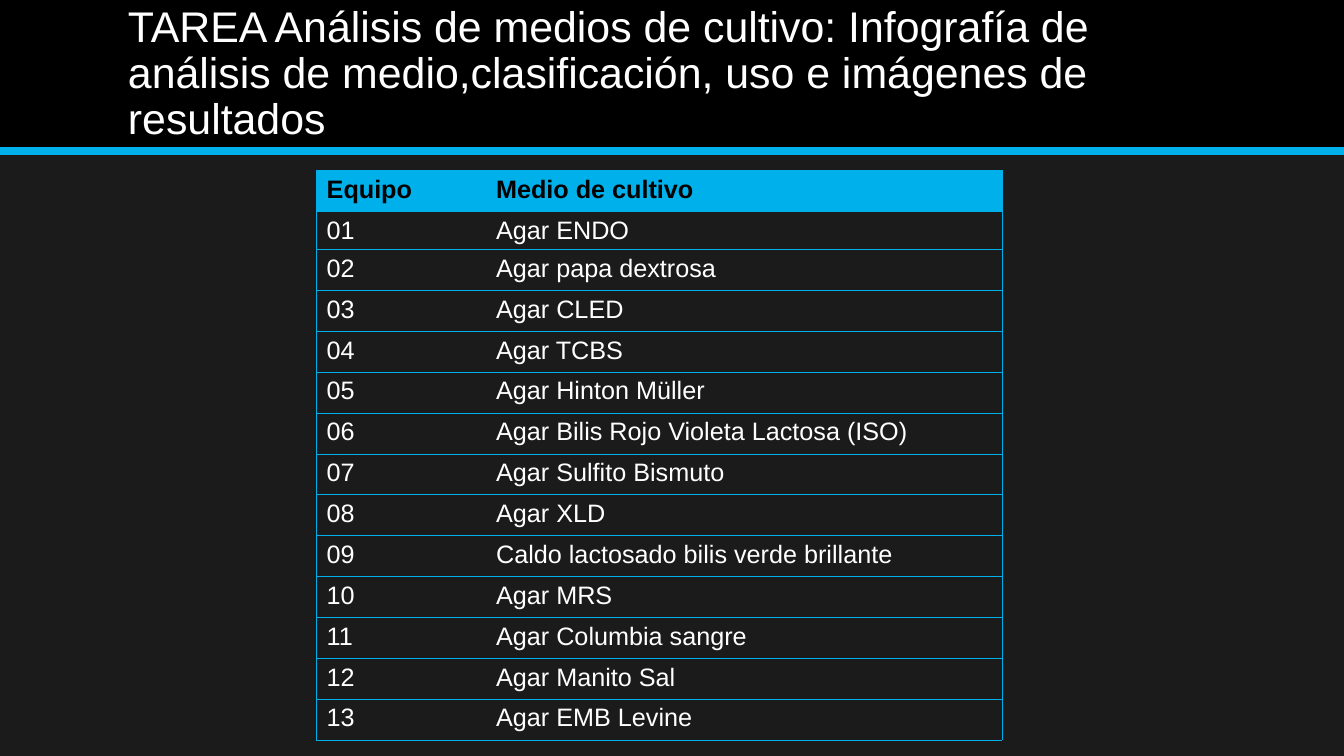
import pptx
import pptx.util
import pptx.dml.color
import pptx.enum.shapes
import pptx.enum.text
import pptx.oxml.ns
import lxml.etree

Cm = pptx.util.Cm
Pt = pptx.util.Pt
RGBColor = pptx.dml.color.RGBColor
qn = pptx.oxml.ns.qn

BLACK = RGBColor(0x00, 0x00, 0x00)
WHITE = RGBColor(0xFF, 0xFF, 0xFF)
DARK = RGBColor(0x1B, 0x1B, 0x1B)
BLUE = RGBColor(0x00, 0xB0, 0xEA)

MEDIA = [
    "Agar ENDO", "Agar papa dextrosa", "Agar CLED", "Agar TCBS",
    "Agar Hinton Müller", "Agar Bilis Rojo Violeta Lactosa (ISO)",
    "Agar Sulfito Bismuto", "Agar XLD",
    "Caldo lactosado bilis verde brillante", "Agar MRS",
    "Agar Columbia sangre", "Agar Manito Sal", "Agar EMB Levine",
]


def write(frame, text, size=18, color=WHITE, bold=False, spacing=1.0):
    para = frame.paragraphs[0]
    para.alignment = pptx.enum.text.PP_ALIGN.LEFT
    para.line_spacing = spacing
    run = para.add_run()
    run.text = text
    run.font.name = "Arial"
    run.font.size = Pt(size)
    run.font.bold = bold
    run.font.color.rgb = color


def border(cell, side, color):
    line = lxml.etree.SubElement(cell._tc.get_or_add_tcPr(), qn("a:" + side))
    line.set("w", str(Pt(0.5)))
    if color is None:
        lxml.etree.SubElement(line, qn("a:noFill"))
    else:
        fill = lxml.etree.SubElement(line, qn("a:solidFill"))
        lxml.etree.SubElement(fill, qn("a:srgbClr")).set("val", str(color))


deck = pptx.Presentation()
deck.slide_width = Cm(33.87)
deck.slide_height = Cm(19.05)
slide = deck.slides.add_slide(deck.slide_layouts[5])
slide.background.fill.solid()
slide.background.fill.fore_color.rgb = DARK

# Title band and its blue rule
band = slide.shapes.add_shape(
    pptx.enum.shapes.MSO_SHAPE.RECTANGLE, 0, 0, deck.slide_width, Cm(3.81))
band.shadow.inherit = False
band.fill.solid()
band.fill.fore_color.rgb = BLACK
band.line.fill.background()

rule = slide.shapes.add_connector(
    pptx.enum.shapes.MSO_CONNECTOR.STRAIGHT, 0, Cm(3.81), deck.slide_width, Cm(3.81))
rule.line.color.rgb = BLUE
rule.line.width = Pt(6)
lxml.etree.SubElement(rule._element.spPr, qn("a:effectLst"))

# Title, brought in front of the band
title = slide.shapes.title
rule._element.addnext(title._element)
title.left, title.top, title.width, title.height = Cm(2.97), Cm(0.36), Cm(27.94), Cm(3.05)
frame = title.text_frame
frame.word_wrap = True
frame.auto_size = pptx.enum.text.MSO_AUTO_SIZE.NONE
frame.vertical_anchor = pptx.enum.text.MSO_ANCHOR.MIDDLE
write(frame, "TAREA Análisis de medios de cultivo: Infografía de análisis de "
      "medio,clasificación, uso e imágenes de resultados", size=30.6, spacing=0.9)

# Table of teams and culture media
rows = [("Equipo", "Medio de cultivo")]
rows += [(f"{team:02}", name) for team, name in enumerate(MEDIA, 1)]
table = slide.shapes.add_table(
    len(rows), 2, Cm(7.98), Cm(4.29), Cm(17.27), Cm(14.4)).table
table.horz_banding = False
table.columns[0].width = Cm(4.27)
table.columns[1].width = Cm(13)

for r, row in enumerate(rows):
    table.rows[r].height = Cm(0.76 if r == 1 else 1.03)
    for c, text in enumerate(row):
        cell = table.cell(r, c)
        border(cell, "lnL", BLUE if c == 0 else None)
        border(cell, "lnR", BLUE if c == 1 else None)
        border(cell, "lnT", BLUE)
        border(cell, "lnB", BLUE)
        if r == 0:
            cell.fill.solid()
            cell.fill.fore_color.rgb = BLUE
            write(cell.text_frame, text, color=BLACK, bold=True)
        else:
            cell.fill.background()
            write(cell.text_frame, text)

deck.save("out.pptx")
